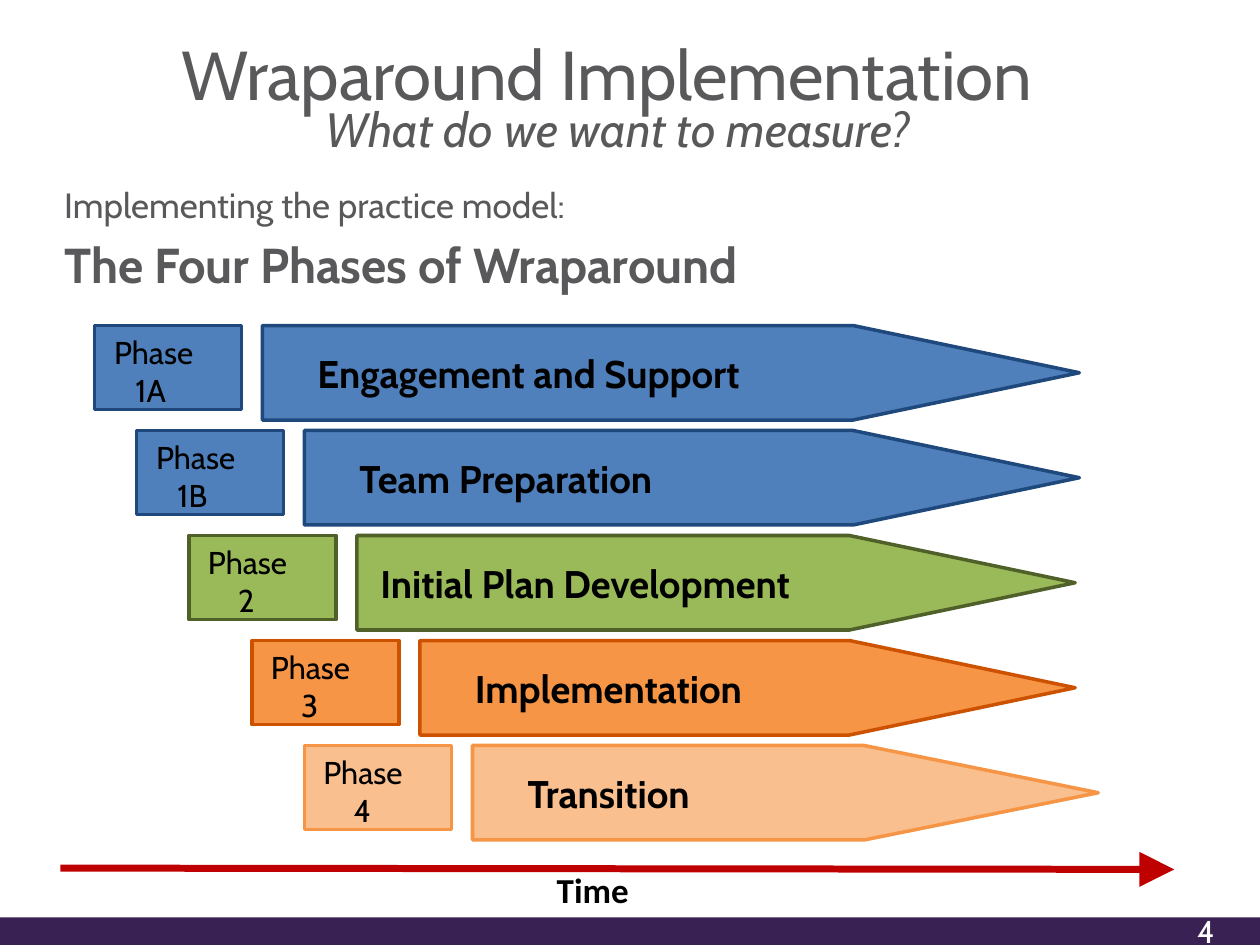
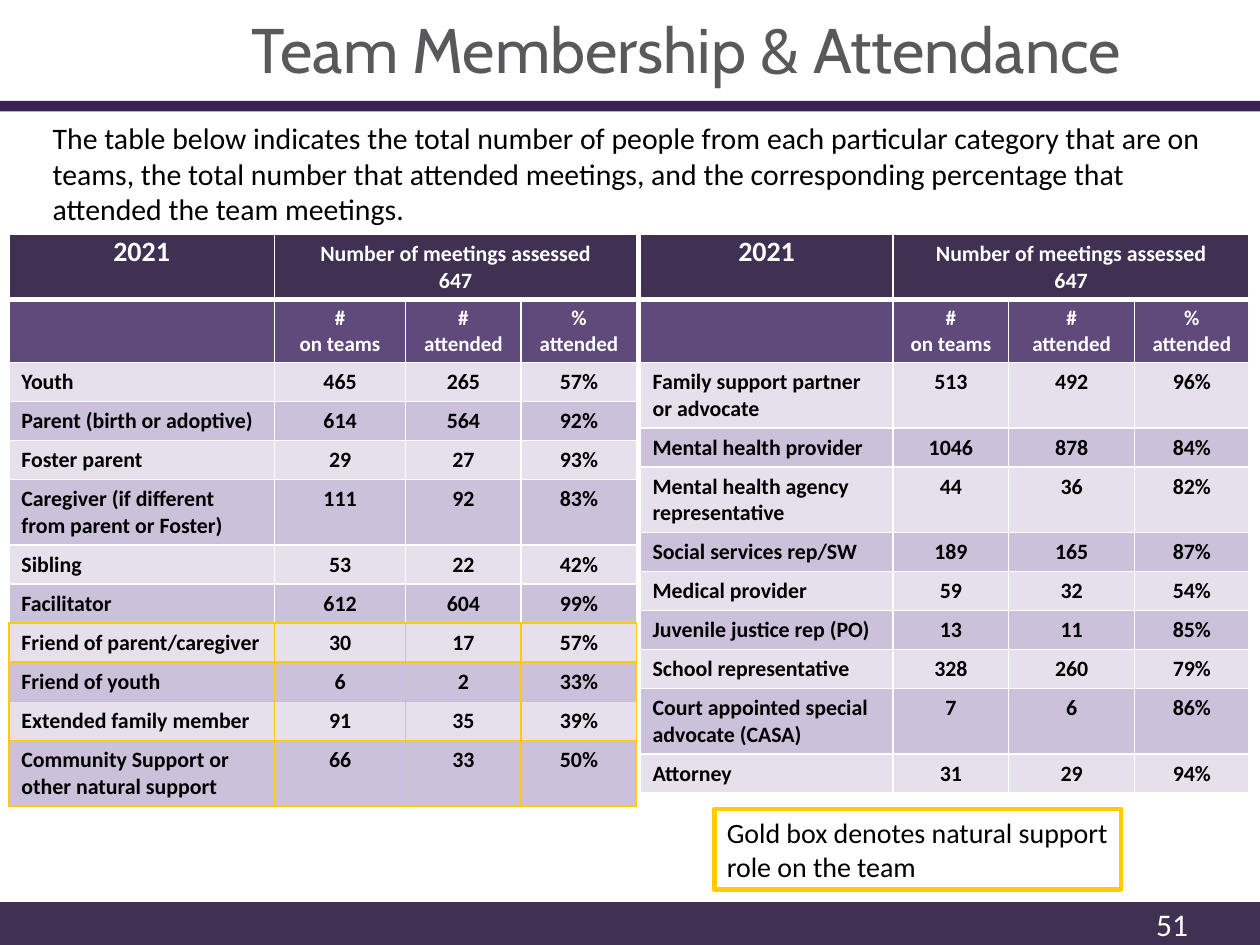
from dataclasses import dataclass
from typing import NamedTuple, Optional

from lxml import etree
from pptx import Presentation
from pptx import util as u
from pptx.dml.color import RGBColor
from pptx.enum import shapes, text
from pptx.oxml.ns import qn

COLUMNS, ROWS = 120, 90
CELL = u.Inches(10) // COLUMNS

COLORS = {
    "white": "FFFFFF", "black": "000000", "heading": "59595B",
    "purple": "3A2154", "plum": "403152", "violet": "604A7B",
    "pale": "E6E0EC", "lilac": "CCC1DA", "gold": "FFCC00", "red": "BF0000",
    "blue": "4F80BC", "navy": "1F497C", "green": "9ABA59", "olive": "4F6028",
    "orange": "F69546", "rust": "CC5200", "peach": "F9BF8E",
}
BODY, DISPLAY = "Calibri", "Cabin"
LEFT, CENTER, RIGHT = text.PP_ALIGN.LEFT, text.PP_ALIGN.CENTER, text.PP_ALIGN.RIGHT
TOP, MIDDLE = text.MSO_ANCHOR.TOP, text.MSO_ANCHOR.MIDDLE
DEFAULT_INSETS = (1.2, 0.6, 1.2, 0.6)
NO_INSETS = (0, 0, 0, 0)


class Area(NamedTuple):
    """A place on the slide, in grid columns and rows."""
    left: float
    top: float
    width: float
    height: float


@dataclass
class Line:
    """One paragraph; indents are in grid columns, space before in points."""
    words: str
    size: float
    font: str = BODY
    color: str = "black"
    bold: bool = False
    italic: bool = False
    align: text.PP_ALIGN = LEFT
    before: float = 0
    margin: float = 0
    hang: float = 0


class Phase(NamedTuple):
    number: str
    name: str
    column: int
    shoulder: float
    tip: float
    fill: str
    edge: str
    name_inset: int = 5


class Roster(NamedTuple):
    """A table of team members and their attendance."""
    left: float
    widths: tuple
    members: tuple
    gold_from: Optional[int] = None


PHASES = (
    Phase("1A", "Engagement and Support", 9, 81.25, 102.8, "blue", "navy"),
    Phase("1B", "Team Preparation", 13, 81.25, 102.8, "blue", "navy"),
    Phase("2", "Initial Plan Development", 18, 80.9, 102.4, "green", "olive", 2),
    Phase("3", "Implementation", 24, 80.9, 102.4, "orange", "rust"),
    Phase("4", "Transition", 29, 82.3, 104.6, "peach", "orange"),
)
ROSTERS = (
    Roster(0.84, (25.3, 12.5, 11, 11), (
        ("Youth", "465", "265", "57%"),
        ("Parent (birth or adoptive)", "614", "564", "92%"),
        ("Foster parent", "29", "27", "93%"),
        ("Caregiver (if different from parent or Foster)", "111", "92", "83%"),
        ("Sibling", "53", "22", "42%"),
        ("Facilitator", "612", "604", "99%"),
        ("Friend of parent/caregiver", "30", "17", "57%"),
        ("Friend of youth", "6", "2", "33%"),
        ("Extended family member", "91", "35", "39%"),
        ("Community Support or other natural support", "66", "33", "50%"),
    ), gold_from=6),
    Roster(60.96, (24.1, 11, 12, 10.9), (
        ("Family support partner or advocate", "513", "492", "96%"),
        ("Mental health provider", "1046", "878", "84%"),
        ("Mental health agency representative", "44", "36", "82%"),
        ("Social services rep/SW", "189", "165", "87%"),
        ("Medical provider", "59", "32", "54%"),
        ("Juvenile justice rep (PO)", "13", "11", "85%"),
        ("School representative", "328", "260", "79%"),
        ("Court appointed special advocate (CASA)", "7", "6", "86%"),
        ("Attorney", "31", "29", "94%"),
    )),
)
SUBHEADS = ("", "#\non teams", "#\nattended", "%\nattended")
ONE_LINE, TWO_LINES = 3.72, 6.24
LONGEST_SINGLE = 26


def cells(count: float) -> int:
    return round(count * CELL)


def place(area: Area) -> list[int]:
    return [cells(length) for length in area]


def rgb(name: str) -> RGBColor:
    return RGBColor.from_string(COLORS[name])


def write(frame, lines: list[Line]) -> None:
    for index, line in enumerate(lines):
        paragraph = frame.paragraphs[0] if index == 0 else frame.add_paragraph()
        paragraph.text = line.words
        paragraph.alignment = line.align
        if line.before:
            paragraph.space_before = u.Pt(line.before)
        if line.margin:
            properties = paragraph._p.get_or_add_pPr()
            properties.set("marL", str(cells(line.margin)))
            properties.set("indent", str(-cells(line.hang)))
        look = {"name": line.font, "size": u.Pt(line.size),
                "bold": line.bold, "italic": line.italic}
        for run in paragraph.runs:
            for key, value in look.items():
                setattr(run.font, key, value)
            run.font.color.rgb = rgb(line.color)


def set_insets(holder, insets: tuple) -> None:
    for side, inset in zip(("left", "top", "right", "bottom"), insets):
        setattr(holder, f"margin_{side}", cells(inset))


def fill_frame(shape, lines: list[Line], insets: tuple, anchor) -> None:
    frame = shape.text_frame
    frame.word_wrap = True
    frame.vertical_anchor = anchor
    set_insets(frame, insets)
    write(frame, lines)


def add_words(slide, area: Area, *lines: Line, insets: tuple = DEFAULT_INSETS) -> None:
    fill_frame(slide.shapes.add_textbox(*place(area)), list(lines), insets, TOP)


def add_block(slide, area: Area, *lines: Line, fill: str = "", edge: str = "",
              weight: float = 2, kind=shapes.MSO_SHAPE.RECTANGLE,
              insets: tuple = NO_INSETS, anchor=MIDDLE):
    block = slide.shapes.add_shape(kind, *place(area))
    block.shadow.inherit = False
    if fill:
        block.fill.solid()
        block.fill.fore_color.rgb = rgb(fill)
    else:
        block.fill.background()
    if edge:
        block.line.color.rgb = rgb(edge)
        block.line.width = u.Pt(weight)
    else:
        block.line.fill.background()
    fill_frame(block, list(lines), insets, anchor)
    return block


def add_title(slide, area: Area, words: str, size: float) -> None:
    add_words(slide, area, Line(words, size, DISPLAY, "heading"), insets=(0.12, 0.2, 0, 0))


def add_footer(slide, number: str, height: float, color: str, font: str, inset: float) -> None:
    add_block(slide, Area(0, ROWS - height, COLUMNS, height),
              Line(number, 18, font, "white", align=RIGHT),
              fill=color, insets=(0, 0, inset, 0))


def add_phase(slide, row: float, phase: Phase) -> None:
    margin, hang = (4.68, 2.88) if len(phase.number) == 1 else (3.9, 2.04)
    add_block(slide, Area(phase.column, row, 14, 8),
              Line(f"Phase\v{phase.number}", 18, DISPLAY, margin=margin, hang=hang),
              fill=phase.fill, edge=phase.edge, insets=(0, 0.72, 0, 0), anchor=TOP)
    start, height = phase.column + 16, 9
    arrow = add_block(slide, Area(start, row, phase.tip - start, height),
                      Line(phase.name, 22, DISPLAY, bold=True),
                      fill=phase.fill, edge=phase.edge, kind=shapes.MSO_SHAPE.PENTAGON,
                      insets=(phase.name_inset + 0.24, 0, 0, 0))
    arrow.adjustments[0] = (phase.tip - phase.shoulder) / height


def add_time_arrow(slide) -> None:
    start, end = (5.76, 82.68), (111.84, 82.8)
    arrow = slide.shapes.add_connector(shapes.MSO_CONNECTOR.STRAIGHT,
                                       *map(cells, start + end))
    arrow.line.color.rgb = rgb("red")
    arrow.line.width = u.Pt(4)
    etree.SubElement(arrow.line._get_or_add_ln(), qn("a:tailEnd"),
                     type="triangle", w="lg", len="lg")
    etree.SubElement(arrow._element.spPr, qn("a:effectLst"))


def set_borders(cell, color: str, bottom: tuple[str, float]) -> None:
    properties = cell._tc.get_or_add_tcPr()
    sides = {"L": (color, 1), "R": (color, 1), "T": (color, 1), "B": bottom}
    for side, (name, width) in sides.items():
        border = etree.SubElement(properties, qn(f"a:ln{side}"), w=str(u.Pt(width)))
        fill = etree.SubElement(border, qn("a:solidFill"))
        etree.SubElement(fill, qn("a:srgbClr"), val=COLORS[name])


def add_roster(slide, roster: Roster) -> None:
    heads = (("2021", "Number of meetings assessed\n647", "", ""), SUBHEADS)
    grid = heads + roster.members
    heights = [6.2, 5.9] + [TWO_LINES if len(member[0]) > LONGEST_SINGLE else ONE_LINE
                            for member in roster.members]
    area = Area(roster.left, 22.32, sum(roster.widths), sum(heights))
    table = slide.shapes.add_table(len(grid), len(SUBHEADS), *place(area)).table
    table.first_row = table.horz_banding = False
    for column, width in zip(table.columns, roster.widths):
        column.width = cells(width)
    gold_row = len(grid) if roster.gold_from is None else roster.gold_from + len(heads)

    for r, (entries, height) in enumerate(zip(grid, heights)):
        table.rows[r].height = cells(height)
        is_head = r < len(heads)
        fill = ("plum", "violet")[r] if is_head else ("pale", "lilac")[r % 2]
        edge = "gold" if r >= gold_row else "white"
        below = "gold" if r + 1 >= gold_row and roster.gold_from else edge
        for c, words in enumerate(entries):
            cell = table.cell(r, c)
            set_borders(cell, edge, (below, 3 if r == 0 else 1))
            cell.fill.solid()
            cell.fill.fore_color.rgb = rgb(fill)
            is_year = r == c == 0
            set_insets(cell, NO_INSETS if is_year else DEFAULT_INSETS)
            size = 16 if is_year else 12 if r == 1 else 12.5
            write(cell.text_frame, [
                Line(part, size, color="white" if is_head else "black", bold=True,
                     align=CENTER if is_head or c else LEFT)
                for part in words.split("\n")])
    table.cell(0, 1).merge(table.cell(0, 3))


def build_phases(slide) -> None:
    add_title(slide, Area(17.16, 2.76, 87.6, 8.28), "Wraparound Implementation", 39.5)
    add_words(slide, Area(6, 9.24, 107, 18.8),
              Line("What do we want to measure?", 27.5, DISPLAY, "heading",
                   italic=True, margin=25),
              Line("Implementing the practice model:", 20, DISPLAY, "heading",
                   before=14.7, margin=0.12),
              Line("The Four Phases of Wraparound", 28, DISPLAY, "heading",
                   bold=True, before=5.2, margin=0.12),
              insets=(0, 0.24, 0, 0))
    first_row, pitch = 31, 10
    for index, phase in enumerate(PHASES):
        add_phase(slide, first_row + index * pitch, phase)
    add_time_arrow(slide)
    add_words(slide, Area(51.84, 82.08, 12, 5.28), Line("Time", 20, bold=True))
    add_footer(slide, "4", 2.64, "purple", DISPLAY, 4.3)


def build_attendance(slide) -> None:
    add_footer(slide, "51", 4.08, "plum", BODY, 6.85)
    add_title(slide, Area(23.88, 0.84, 93.12, 7.44), "Team Membership & Attendance", 36)
    add_block(slide, Area(0, 9.6, COLUMNS, 1.02), fill="purple")
    add_words(slide, Area(3.84, 10.8, 114.84, 11.52), Line(
        "The table below indicates the total number of people from each particular "
        "category that are on teams, the total number that attended meetings, and the "
        "corresponding percentage that attended the team meetings.", 17))
    for roster in ROSTERS:
        add_roster(slide, roster)
    add_block(slide, Area(68.04, 77.04, 38.76, 7.68),
              Line("Gold box denotes natural support role on the team", 16),
              edge="gold", weight=2.5, insets=DEFAULT_INSETS)


def main() -> None:
    deck = Presentation()
    deck.slide_width, deck.slide_height = cells(COLUMNS), cells(ROWS)
    blank = deck.slide_layouts[6]
    for build in (build_phases, build_attendance):
        build(deck.slides.add_slide(blank))
    deck.save("out.pptx")


if __name__ == "__main__":
    main()
